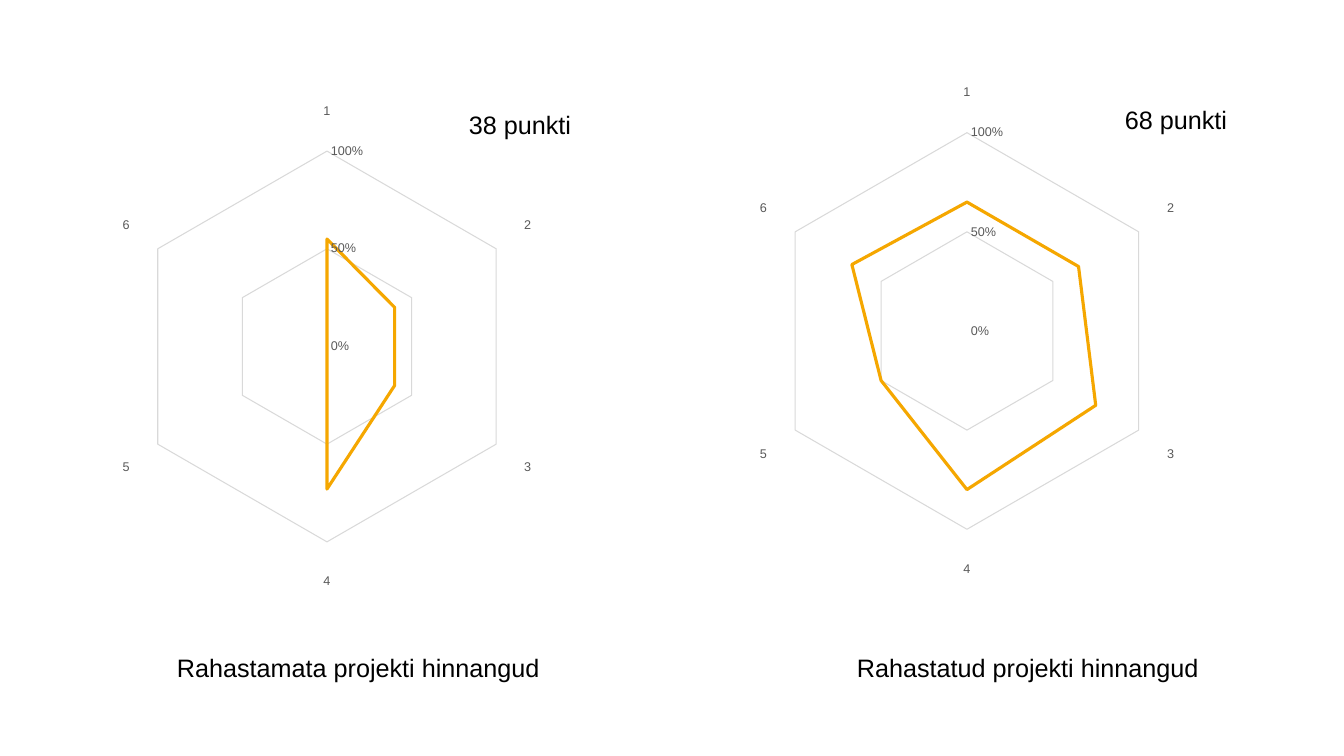
from pptx import Presentation, util as u
from pptx.chart.data import CategoryChartData
from pptx.dml.color import RGBColor
from pptx.enum import chart as ch, text

THEME = {
    "font": "Arial",
    "ink": RGBColor.from_string("000000"),
    "axis": RGBColor.from_string("595959"),
    "grid": RGBColor.from_string("D9D9D9"),
    "score": RGBColor.from_string("F5A700"),
    "caption_size": u.Pt(18),
    "chart_size": u.Pt(10),
    "axis_size": u.Pt(9),
    "grid_width": u.Pt(0.75),
    "score_width": u.Pt(2.25),
}


def px(n):
    return u.Emu(round(n * 914400 / 100.8))


def style_font(font, size, color):
    font.name, font.size = THEME["font"], size
    font.color.rgb = color


deck = Presentation()
deck.slide_width, deck.slide_height = px(1344), px(756)
slide = deck.slides.add_slide(deck.slide_layouts[6])

# Radar charts: place and scores on the six criteria
criteria = ["1", "2", "3", "4", "5", "6"]
projects = [
    ((54, 94, 546, 505), (0.55, 0.4, 0.4, 0.73, 0, 0)),
    ((712, 75, 510, 512), (0.65, 0.65, 0.75, 0.8, 0.5, 0.67)),
]
scale_format = {
    "minimum_scale": 0,
    "maximum_scale": 1,
    "major_unit": 0.5,
    "has_major_gridlines": True,
}
for place, scores in projects:
    ratings = CategoryChartData(number_format="0%")
    ratings.categories = criteria
    ratings.add_series("Series 1", scores)
    radar = slide.shapes.add_chart(
        ch.XL_CHART_TYPE.RADAR, *map(px, place), ratings).chart
    radar.has_title = radar.has_legend = False
    style_font(radar.font, THEME["chart_size"], THEME["ink"])
    radar.plots[0].vary_by_categories = False

    # Score outline
    outline = radar.plots[0].series[0].format.line
    outline.color.rgb, outline.width = THEME["score"], THEME["score_width"]

    # Axes and rings
    criteria_axis, scale = radar.category_axis, radar.value_axis
    for name, value in scale_format.items():
        setattr(scale, name, value)
    for axis in (criteria_axis, scale):
        axis.major_tick_mark = axis.minor_tick_mark = ch.XL_TICK_MARK.NONE
        style_font(axis.tick_labels.font, THEME["axis_size"], THEME["axis"])
    scale.tick_labels.number_format = "0%"
    scale.tick_labels.number_format_is_linked = False
    scale.format.line.fill.background()
    for line in (criteria_axis.format.line, scale.major_gridlines.format.line):
        line.color.rgb, line.width = THEME["grid"], THEME["grid_width"]

# Captions and total scores
captions = [
    ("Rahastatud projekti hinnangud", 847, 647, 377),
    ("Rahastamata projekti hinnangud", 167, 647, 409),
    ("38 punkti", 459, 104, 130),
    ("68 punkti", 1115, 99, 130),
]
frame_format = {"word_wrap": False, "auto_size": text.MSO_AUTO_SIZE.SHAPE_TO_FIT_TEXT}
for wording, left, top, width in captions:
    caption = slide.shapes.add_textbox(px(left), px(top), px(width), px(40)).text_frame
    for name, value in frame_format.items():
        setattr(caption, name, value)
    run = caption.paragraphs[0].add_run()
    run.text = wording
    style_font(run.font, THEME["caption_size"], THEME["ink"])

deck.save("out.pptx")
